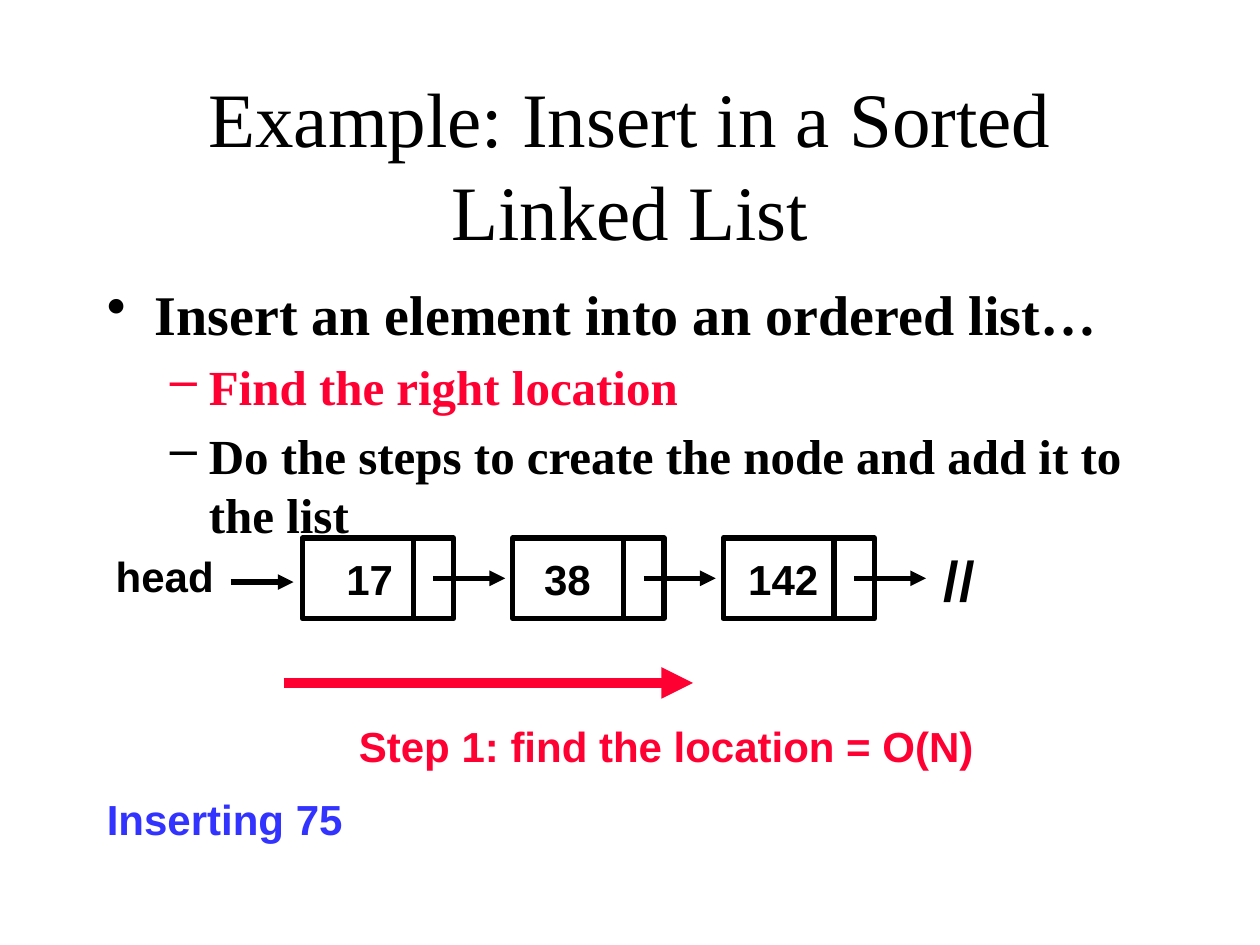
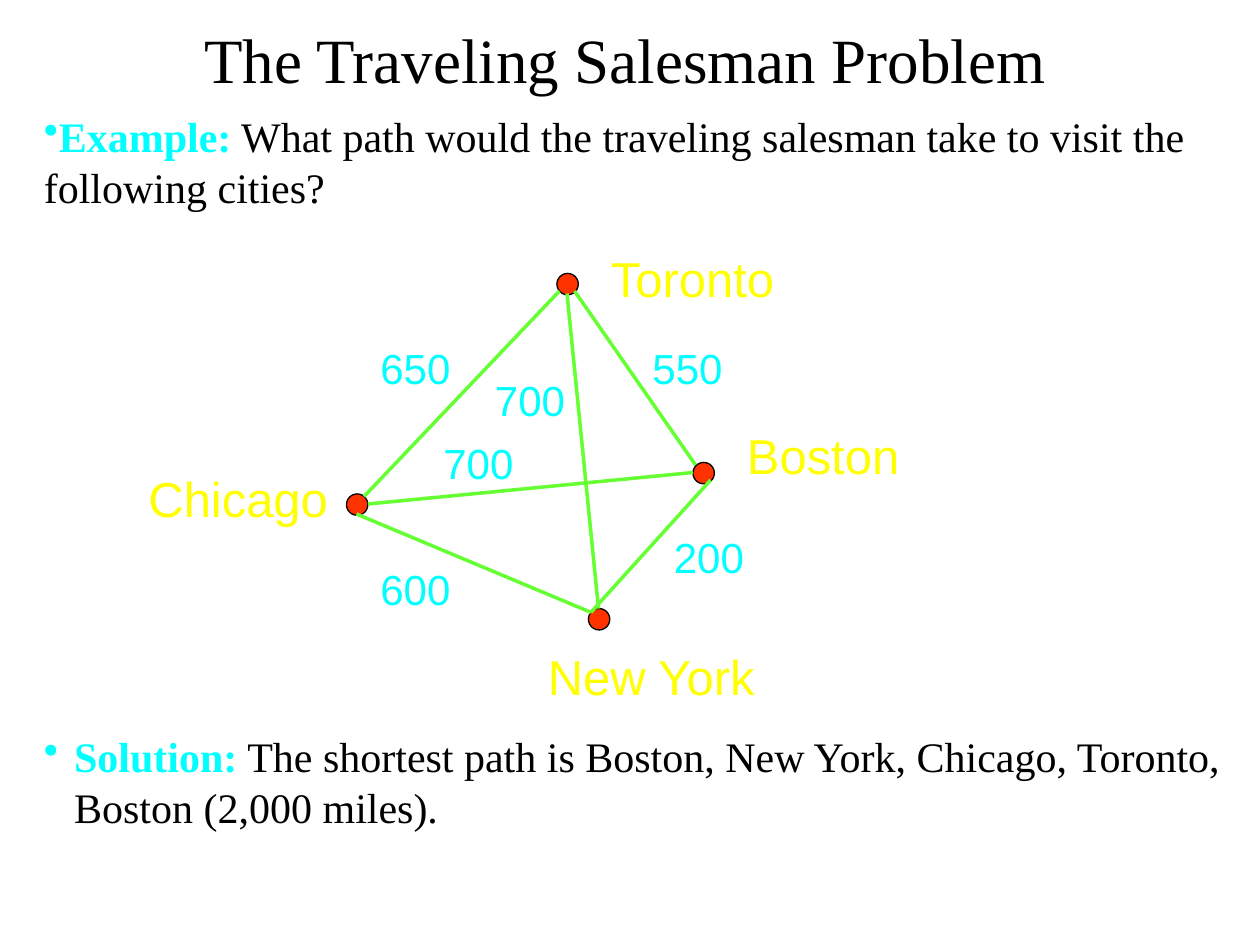
from lxml.etree import SubElement
from pptx import Presentation
from pptx.dml.color import RGBColor
from pptx.enum.shapes import MSO_CONNECTOR, MSO_SHAPE
from pptx.enum.text import MSO_ANCHOR, MSO_AUTO_SIZE, PP_ALIGN
from pptx.oxml.ns import qn
from pptx.util import Inches, Pt

BLACK = RGBColor(0x00, 0x00, 0x00)
RED = RGBColor(0xFF, 0x00, 0x33)
BLUE = RGBColor(0x33, 0x33, 0xFF)
CYAN = RGBColor(0x00, 0xFF, 0xFF)
YELLOW = RGBColor(0xFF, 0xFF, 0x00)
GREEN = RGBColor(0x66, 0xFF, 0x33)
ORANGE = RGBColor(0xFF, 0x33, 0x00)
SERIF = "Times New Roman"
SANS = "Arial"


def write(paragraph, text, *, size=24, font=SANS, color=BLACK, bold=False):
    run = paragraph.add_run()
    run.text = text
    run.font.size = Pt(size)
    run.font.name = font
    run.font.bold = bold
    run.font.color.rgb = color


class Deck:
    """Shared style and the slide being built."""

    def __init__(self):
        self.prs = Presentation()
        self.prs.slide_width = Inches(10)
        self.prs.slide_height = Inches(7.5)
        self.slide = None

    def new_slide(self, title, left, top, width, height, size):
        self.slide = self.prs.slides.add_slide(self.prs.slide_layouts[5])
        heading = self.slide.shapes.title
        heading.left, heading.top = Inches(left), Inches(top)
        heading.width, heading.height = Inches(width), Inches(height)
        frame = heading.text_frame
        frame.word_wrap = True
        frame.auto_size = MSO_AUTO_SIZE.NONE
        frame.vertical_anchor = MSO_ANCHOR.MIDDLE
        frame.paragraphs[0].alignment = PP_ALIGN.CENTER
        write(frame.paragraphs[0], title, size=size, font=SERIF)

    def text_frame(self, left, top, width, height, wrap=True):
        box = self.slide.shapes.add_textbox(
            Inches(left), Inches(top), Inches(width), Inches(height))
        box.text_frame.word_wrap = wrap
        return box.text_frame

    def label(self, text, left, top, width, height=0.5, wrap=False, **style):
        frame = self.text_frame(left, top, width, height, wrap)
        frame.auto_size = MSO_AUTO_SIZE.SHAPE_TO_FIT_TEXT
        write(frame.paragraphs[0], text, **style)

    def bullets(self, items, left, top, width, height, after=0):
        """Each item is (bullet, margin, hanging indent, size, runs)."""
        frame = self.text_frame(left, top, width, height)
        for index, (bullet, margin, hanging, size, runs) in enumerate(items):
            paragraph = frame.add_paragraph() if index else frame.paragraphs[0]
            paragraph.space_before = Pt(size * 0.2)
            paragraph.space_after = Pt(after)
            props = paragraph._p.get_or_add_pPr()
            props.set("marL", str(Inches(margin)))
            props.set("indent", str(-Inches(hanging)))
            SubElement(props, qn("a:buChar")).set("char", bullet)
            for text, color, bold in runs:
                write(paragraph, text, size=size, font=SERIF, color=color, bold=bold)

    def shape(self, kind, left, top, width, height, line_width, fill=None):
        shape = self.slide.shapes.add_shape(
            kind, Inches(left), Inches(top), Inches(width), Inches(height))
        shape.shadow.inherit = False
        if fill is None:
            shape.fill.background()
        else:
            shape.fill.solid()
            shape.fill.fore_color.rgb = fill
        shape.line.color.rgb = BLACK
        shape.line.width = Pt(line_width)

    def line(self, start, end, color=BLACK, width=3, arrow=False):
        connector = self.slide.shapes.add_connector(
            MSO_CONNECTOR.STRAIGHT, *map(Inches, start + end))
        connector.line.color.rgb = color
        connector.line.width = Pt(width)
        if arrow:
            outline = connector.line._get_or_add_ln()
            SubElement(outline, qn("a:tailEnd")).set("type", "triangle")
        SubElement(connector._element.spPr, qn("a:effectLst"))


def build_linked_list(deck):
    deck.new_slide("Example: Insert in a Sorted Linked List",
                   0.75, 0.67, 8.5, 1.25, size=44)
    deck.bullets([
        ("•", 0.38, 0.38, 32,
         [("Insert an element into an ordered list…", BLACK, True)]),
        ("–", 0.81, 0.31, 28, [("Find the right location", RED, True)]),
        ("–", 0.81, 0.31, 28,
         [("Do the steps to create the node and add it to the list", BLACK, True)]),
    ], 0.75, 2.17, 8.5, 4.5)

    # Nodes: value cell, pointer cell and arrow to the next node
    node_top, node_height = 4.27, 0.64
    pointer_y = node_top + node_height / 2
    nodes = [("17", 0.25, 0.57), ("38", 0.15, 0.57), ("142", 0.1, 0.76)]
    for index, (value, inset, value_width) in enumerate(nodes):
        left = 2.4 + 1.67 * index
        deck.shape(MSO_SHAPE.RECTANGLE, left, node_top, 1.2, node_height, 3)
        deck.line((left + 0.88, node_top), (left + 0.88, node_top + node_height))
        deck.line((left + 1.04, pointer_y), (left + 1.61, pointer_y), arrow=True)
        deck.label(value, left + inset, 4.34, value_width, bold=True)

    # Ends of the list
    deck.label("head", 0.82, 4.32, 0.98, bold=True)
    deck.line((1.83, 4.62), (2.33, 4.62), arrow=True)
    deck.label("//", 7.39, 4.28, 0.45, 0.63, size=32, bold=True)

    # Search step
    deck.label("Inserting 75", 0.75, 6.25, 2.07, color=BLUE, bold=True)
    deck.line((2.25, 5.42), (5.5, 5.42), RED, 6, arrow=True)
    deck.label("Step 1: find the location = O(N)", 2.75, 5.67, 5.08,
               color=RED, bold=True)


def build_salesman(deck):
    deck.new_slide("The Traveling Salesman Problem", 0.25, 0, 9.42, 0.92, size=36)
    statements = [
        (0.83, 0, "Example:", " What path would the traveling salesman take "
         "to visit the following cities?"),
        (5.75, 0.24, "Solution:", " The shortest path is Boston, New York, "
         "Chicago, Toronto, Boston (2,000 miles)."),
    ]
    for top, indent, lead, rest in statements:
        runs = [(lead, CYAN, True), (rest, BLACK, False)]
        deck.bullets([("•", indent, indent, 24, runs)],
                     0.25, top, 9.58, 1.17, after=4.8)

    # Cities: dot corner, then label corner and width
    cities = [
        ("Chicago", (2.75, 3.92), (1.08, 3.67), 1.67),
        ("New York", (4.67, 4.83), (4.25, 5.08), 2.33),
        ("Boston", (5.5, 3.67), (5.83, 3.33), 1.67),
        ("Toronto", (4.42, 2.17), (4.75, 1.92), 1.67),
    ]
    for city, dot, corner, width in cities:
        deck.shape(MSO_SHAPE.FLOWCHART_CONNECTOR, *dot, 0.17, 0.17, 0.75, ORANGE)
        deck.label(city, *corner, width, 0.57, wrap=True, size=28, color=YELLOW)

    # Routes: distance, both ends, label corner
    routes = [
        ("650", (4.44, 2.31), (2.89, 3.94), (2.92, 2.67)),
        ("600", (2.83, 4.08), (4.69, 4.86), (2.92, 4.42)),
        ("200", (5.64, 3.81), (4.69, 4.86), (5.25, 4.17)),
        ("700", (2.92, 4), (5.5, 3.75), (3.42, 3.42)),
        ("550", (4.56, 2.31), (5.52, 3.69), (5.08, 2.67)),
        ("700", (4.5, 2.33), (4.75, 4.83), (3.83, 2.92)),
    ]
    for distance, start, end, corner in routes:
        deck.line(start, end, GREEN, 2)
        deck.label(distance, *corner, 1.08, wrap=True, color=CYAN)


def main():
    deck = Deck()
    build_linked_list(deck)
    build_salesman(deck)
    deck.prs.save("out.pptx")


if __name__ == "__main__":
    main()
